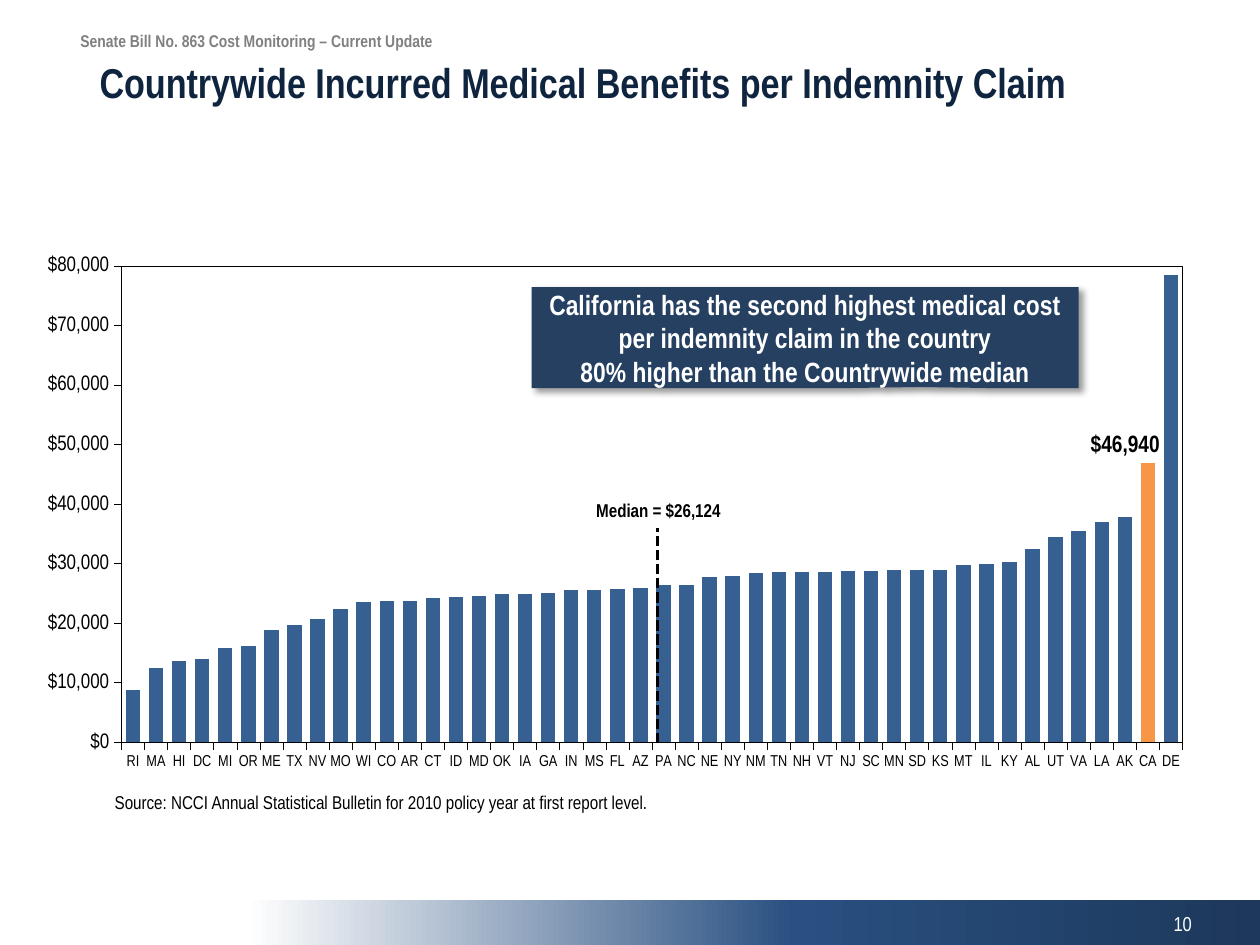
import pptx
import pptx.chart.data
import pptx.dml.color
import pptx.enum.chart
import pptx.enum.dml
import pptx.enum.shapes
import pptx.enum.text
import pptx.oxml
import pptx.oxml.ns
import pptx.util

Pt = pptx.util.Pt
RGBColor = pptx.dml.color.RGBColor
PP_ALIGN = pptx.enum.text.PP_ALIGN
ANCHOR = pptx.enum.text.MSO_ANCHOR
SHAPE = pptx.enum.shapes.MSO_SHAPE

BLACK = RGBColor(0x00, 0x00, 0x00)
WHITE = RGBColor(0xFF, 0xFF, 0xFF)
GRAY = RGBColor(0x80, 0x80, 0x80)
NAVY = RGBColor(0x0F, 0x24, 0x3E)
CALLOUT_BLUE = RGBColor(0x25, 0x40, 0x61)
BAR_BLUE = RGBColor(0x37, 0x60, 0x92)
ORANGE = RGBColor(0xF7, 0x96, 0x46)
FONT = "Arial Narrow"
NS = pptx.oxml.ns.nsdecls("a", "c")

prs = pptx.Presentation()
prs.slide_width = pptx.util.Inches(10)
prs.slide_height = pptx.util.Inches(7.5)
COL = prs.slide_width / 100
ROW = prs.slide_height / 75
s = prs.slides.add_slide(prs.slide_layouts[5])


def grid(x, y, w, h):
    """Turn columns and rows of the 100 x 75 grid into slide lengths."""
    return int(x * COL), int(y * ROW), int(w * COL), int(h * ROW)


def write(shape, lines, size, color, bold=False, align=PP_ALIGN.LEFT,
          anchor=ANCHOR.TOP, inset=(0.1, 0.05)):
    tf = shape.text_frame
    tf.word_wrap = True
    tf.auto_size = pptx.enum.text.MSO_AUTO_SIZE.NONE
    tf.vertical_anchor = anchor
    tf.margin_left = tf.margin_right = pptx.util.Inches(inset[0])
    tf.margin_top = tf.margin_bottom = pptx.util.Inches(inset[1])
    for i, line in enumerate(lines):
        p = tf.add_paragraph() if i else tf.paragraphs[0]
        p.alignment = align
        r = p.add_run()
        r.text = line
        r.font.name = FONT
        r.font.size = Pt(size)
        r.font.bold = bold
        r.font.color.rgb = color


# Footer band
band = s.shapes.add_shape(SHAPE.RECTANGLE, *grid(19.6, 71.4, 80.4, 3.6))
band.shadow.inherit = False
band.line.fill.background()
band.fill.gradient()
band.fill.gradient_angle = 180
stops = band.fill._fill._gradFill.find(pptx.oxml.ns.qn("a:gsLst"))
for stop in list(stops):
    stops.remove(stop)
for pos, color in ((0, "1D385B"), (46, "295081"), (100, "FFFFFF")):
    stops.append(pptx.oxml.parse_xml(
        f'<a:gs {NS} pos="{pos * 1000}"><a:srgbClr val="{color}"/></a:gs>'))

# Heading
header = s.shapes.add_textbox(*grid(5.4, 1.9, 90.6, 2.6))
write(header, ["Senate Bill No. 863 Cost Monitoring – Current Update"], 9.7, GRAY, bold=True)
title = s.shapes.title
title.left, title.top, title.width, title.height = grid(6.8, 3.9, 93.2, 5.5)
write(title, ["Countrywide Incurred Medical Benefits per Indemnity Claim"], 23.8, NAVY,
      bold=True, inset=(0.11, 0.06))
number = s.shapes.add_textbox(*grid(72.4, 71.3, 23.3, 4))
write(number, ["10"], 11.5, WHITE, align=PP_ALIGN.RIGHT, anchor=ANCHOR.MIDDLE,
      inset=(0.11, 0.06))

# Chart of medical benefits by state
states = ("RI MA HI DC MI OR ME TX NV MO WI CO AR CT ID MD OK IA GA IN MS FL AZ PA NC NE "
          "NY NM TN NH VT NJ SC MN SD KS MT IL KY AL UT VA LA AK CA DE").split()
benefits = [8741, 12510, 13662, 13900, 15830, 16109, 18853, 19701, 20728, 22413, 23505,
            23707, 23749, 24140, 24351, 24575, 24803, 24819, 25109, 25570, 25590, 25662,
            25881, 26367, 26368, 27711, 27961, 28483, 28567, 28643, 28646, 28705, 28768,
            28836, 28890, 28943, 29745, 29934, 30269, 32496, 34478, 35463, 36924, 37777,
            46940, 78464]
cd = pptx.chart.data.CategoryChartData(number_format='"$"#,##0')
cd.categories = states
cd.add_series("Series 1", benefits)
chart = s.shapes.add_chart(pptx.enum.chart.XL_CHART_TYPE.COLUMN_CLUSTERED,
                           *grid(3.8, 18.7, 91.5, 43.8), cd).chart
chart.has_legend = False
chart.has_title = False
chart.font.name = "Arial"
chart.font.size = Pt(13.5)
chart.font.bold = True
chart.font.color.rgb = BLACK

for axis, size in ((chart.category_axis, 9), (chart.value_axis, 12)):
    axis.has_major_gridlines = False
    axis.major_tick_mark = pptx.enum.chart.XL_TICK_MARK.OUTSIDE
    axis.format.line.color.rgb = BLACK
    axis.format.line.width = Pt(0.28)
    font = axis.tick_labels.font
    font.name = FONT
    font.size = Pt(size)
    font.bold = False
    font.color.rgb = BLACK
value_axis = chart.value_axis
value_axis.minimum_scale = 0
value_axis.maximum_scale = 80000
value_axis.major_unit = 10000
value_axis.tick_labels.number_format = '"$"#,##0'
value_axis.tick_labels.number_format_is_linked = False
offset = chart.category_axis._element.find(pptx.oxml.ns.qn("c:lblOffset"))
offset.addnext(pptx.oxml.parse_xml(f'<c:tickLblSkip {NS} val="1"/>'))

plot = chart.plots[0]
plot.gap_width = 60
plot.vary_by_categories = False
series = plot.series[0]
series.format.fill.solid()
series.format.fill.fore_color.rgb = BAR_BLUE
california = series.points[states.index("CA")]
california.format.fill.solid()
california.format.fill.fore_color.rgb = ORANGE
label = california.data_label
label.position = pptx.enum.chart.XL_LABEL_POSITION.OUTSIDE_END
label.font.name = FONT
label.font.size = Pt(13.5)
label.font.bold = True
label.font.color.rgb = BLACK
# Move the label left, clear of the tallest bar
label_idx = label._get_or_add_dLbl().find(pptx.oxml.ns.qn("c:idx"))
label_idx.addnext(pptx.oxml.parse_xml(
    f'<c:layout {NS}><c:manualLayout><c:x val="-0.02"/><c:y val="0"/>'
    '</c:manualLayout></c:layout>'))

# Plot area: fixed place and thin frame
area = chart._chartSpace.chart.plotArea
for old in area.findall(pptx.oxml.ns.qn("c:layout")):
    area.remove(old)
shares = "".join(f'<c:{tag} val="{val}"/>' for tag, val in
                 (("x", 0.05), ("y", 0.055), ("w", 0.934), ("h", 0.863)))
area.insert(0, pptx.oxml.parse_xml(
    f'<c:layout {NS}><c:manualLayout><c:layoutTarget val="inner"/>'
    f'<c:xMode val="edge"/><c:yMode val="edge"/>{shares}</c:manualLayout></c:layout>'))
area.append(pptx.oxml.parse_xml(
    f'<c:spPr {NS}><a:noFill/><a:ln w="3600"><a:solidFill><a:srgbClr val="000000"/>'
    '</a:solidFill></a:ln></c:spPr>'))

source = s.shapes.add_textbox(*grid(8.2, 62.4, 83.8, 2.7))
write(source, ["Source: NCCI Annual Statistical Bulletin for 2010 policy year at first "
               "report level."], 10.6, BLACK, inset=(0.09, 0.04))

# Median marker
x, bottom, _, _ = grid(52.2, 59, 0, 0)
median = s.shapes.add_connector(pptx.enum.shapes.MSO_CONNECTOR.STRAIGHT,
                                x, bottom, x, int(41.9 * ROW))
median.line.color.rgb = BLACK
median.line.width = Pt(2)
median.line.dash_style = pptx.enum.dml.MSO_LINE.SQUARE_DOT
median._element.spPr.append(pptx.oxml.parse_xml(f'<a:effectLst {NS}/>'))
median_label = s.shapes.add_textbox(*grid(45.5, 39.1, 13.5, 2.8))
write(median_label, ["Median = $26,124"], 10.6, BLACK, bold=True, align=PP_ALIGN.CENTER)

# Callout
callout = s.shapes.add_shape(SHAPE.RECTANGULAR_CALLOUT, *grid(42.2, 22.8, 43.4, 8))
callout.adjustments[0] = 0.21
callout.adjustments[1] = 0.49
callout.fill.solid()
callout.fill.fore_color.rgb = CALLOUT_BLUE
callout.line.fill.background()
callout.shadow.inherit = False
effects = callout._element.spPr.find(pptx.oxml.ns.qn("a:effectLst"))
effects.append(pptx.oxml.parse_xml(
    f'<a:outerShdw {NS} blurRad="{Pt(4)}" dist="{Pt(3)}" dir="2700000" algn="tl" '
    'rotWithShape="0"><a:srgbClr val="000000"><a:alpha val="40000"/></a:srgbClr>'
    '</a:outerShdw>'))
write(callout, ["California has the second highest medical cost per indemnity claim in the country",
                "80% higher than the Countrywide median"], 15.9, WHITE, bold=True,
      align=PP_ALIGN.CENTER, anchor=ANCHOR.MIDDLE)

prs.save("out.pptx")
